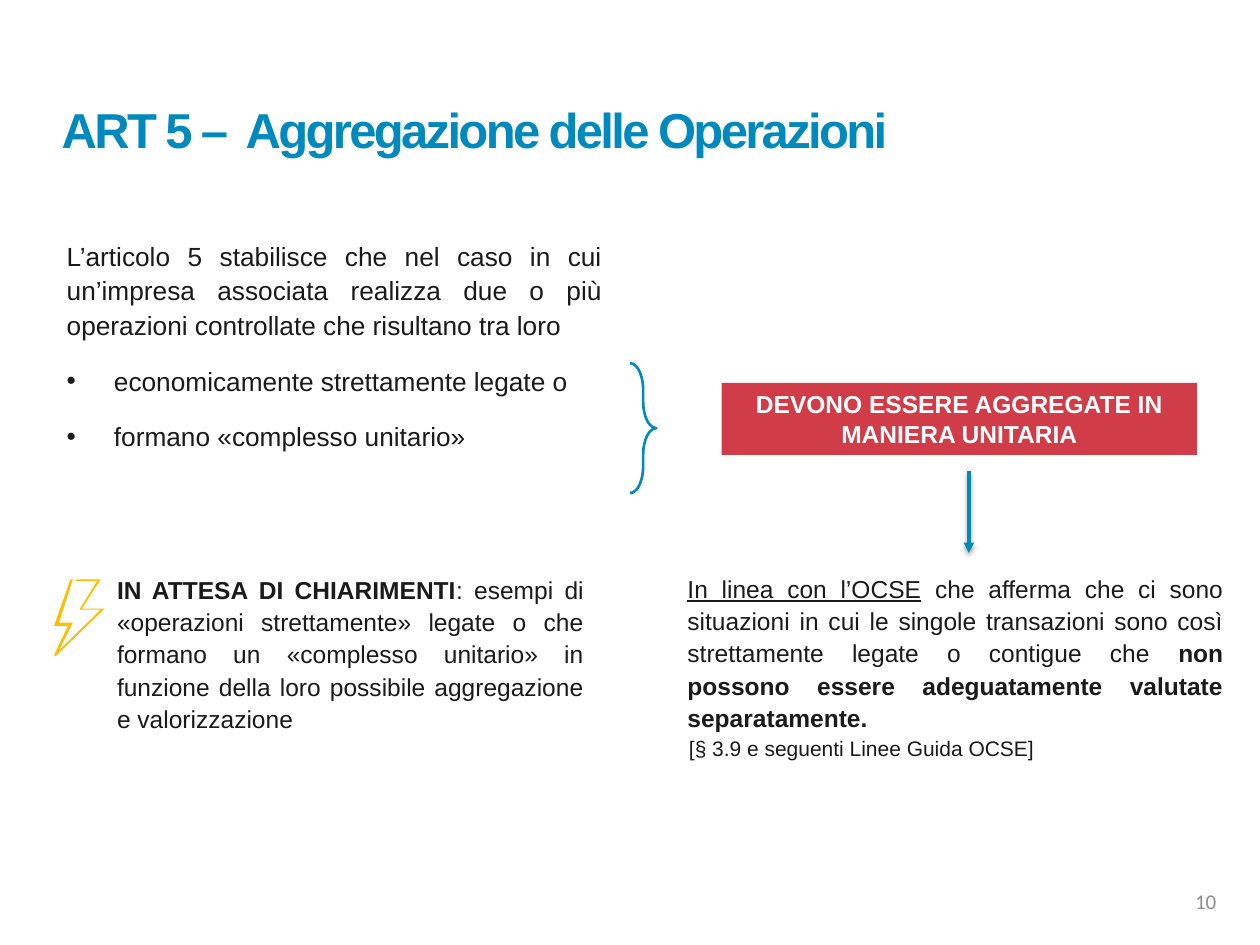
from lxml.etree import SubElement as Sub
from pptx import Presentation
from pptx.dml.color import RGBColor as RGB
from pptx.enum.shapes import MSO_CONNECTOR as Link, MSO_SHAPE as Kind
from pptx.enum.text import MSO_ANCHOR as Anchor, MSO_AUTO_SIZE as Fit, PP_ALIGN as Align
from pptx.oxml.ns import qn
from pptx.util import Cm, Pt

BLUE = RGB(0x00, 0x89, 0xBC)
RED = RGB(0xD0, 0x3D, 0x49)
GOLD = RGB(0xFC, 0xBE, 0x00)
INK = RGB(0x1A, 0x1A, 0x1A)
GREY = RGB(0x8D, 0x8D, 0x8D)
WHITE = RGB(0xFF, 0xFF, 0xFF)

BODY = dict(alignment=Align.JUSTIFY, line_spacing=1.1, space_before=Pt(6), space_after=Pt(6))
BOLT = [(165, 1227), (211, 1227), (112, 1323), (109, 1321), (137, 1262), (109, 1262),
        (142, 1168), (147, 1168), (119, 1255), (147, 1255), (119, 1311), (203, 1229),
        (160, 1229), (196, 1171), (152, 1171), (155, 1168), (203, 1168)]


def apply(item, vals):
    for key, val in vals.items():
        setattr(item, key, val)


class Deck:
    def __init__(self, font):
        self.font = font
        self.prs = Presentation()
        apply(self.prs, dict(slide_width=Cm(25.4), slide_height=Cm(19.05)))
        self.slide = self.prs.slides.add_slide(self.prs.slide_layouts[1])
        self.shapes = self.slide.shapes

    def place(self, shape, *box):
        apply(shape, dict(zip(("left", "top", "width", "height"), map(Cm, box))))

    def fill_in(self, shape, paras, size, color, form, anchor=Anchor.TOP, wrap=True, font=None):
        frame = shape.text_frame
        apply(frame, dict(word_wrap=wrap, auto_size=Fit.NONE, vertical_anchor=anchor))
        for i, runs in enumerate(paras):
            para = frame.add_paragraph() if i else frame.paragraphs[0]
            apply(para, form)
            if not i:
                para.space_before = Pt(0)
            for text, face in runs:
                run = para.add_run()
                run.text = text
                apply(run.font, dict(name=font or self.font, size=Pt(size), **face))
                run.font.color.rgb = color

    def title(self, text, *box):
        shape = self.shapes.title
        self.place(shape, *box)
        form = dict(alignment=Align.LEFT, line_spacing=0.8)
        self.fill_in(shape, [[(text, dict(bold=True))]], 28, BLUE, form, Anchor.MIDDLE)
        shape.text_frame.paragraphs[0].runs[0].font._element.set("spc", "-150")

    def list(self, lead, items, *box):
        shape = self.slide.placeholders[1]
        self.place(shape, *box)
        self.fill_in(shape, [[(text, {})] for text in [lead, *items]], 15, INK, BODY)
        props = shape.text_frame.paragraphs[0]._p.get_or_add_pPr()
        for key in ("marL", "indent"):
            props.set(key, "0")
        Sub(props, qn("a:buNone"))

    def text(self, runs, box, size=14, color=INK, form=BODY, **opts):
        shape = self.shapes.add_textbox(*map(Cm, box))
        self.fill_in(shape, [runs], size, color, form, **opts)

    def paint(self, shape, color):
        shape.shadow.inherit = False
        shape.fill.solid()
        shape.fill.fore_color.rgb = color
        shape.line.fill.background()

    def label(self, text, *box):
        shape = self.shapes.add_shape(Kind.RECTANGLE, *map(Cm, box))
        self.paint(shape, RED)
        self.fill_in(shape, [[(text, dict(bold=True))]], 14, WHITE, dict(alignment=Align.CENTER))

    def bolt(self, spots):
        pen = self.shapes.build_freeform(*spots[0], scale=Cm(0.01))
        pen.add_line_segments(spots[1:], close=True)
        self.paint(pen.convert_to_shape(), GOLD)

    def brace(self, *box):
        shape = self.shapes.add_shape(Kind.LEFT_BRACE, *map(Cm, box))
        shape.shadow.inherit = False
        shape.rotation = 180
        shape.adjustments[0] = 1.02
        shape.fill.background()
        shape.line.color.rgb = BLUE
        shape.line.width = Pt(1.5)

    def arrow(self, x, top, end):
        link = self.shapes.add_connector(Link.STRAIGHT, Cm(x), Cm(top), Cm(x), Cm(end))
        link.line.color.rgb = BLUE
        link.line.width = Pt(2)
        props = link._element.spPr
        Sub(props.find(qn("a:ln")), qn("a:tailEnd"), type="triangle")
        glow = Sub(Sub(props, qn("a:effectLst")), qn("a:outerShdw"), blurRad="40000",
                   dist="20000", dir="5400000", rotWithShape="0")
        Sub(Sub(glow, qn("a:srgbClr"), val="000000"), qn("a:alpha"), val="38000")


def main():
    deck = Deck("Arial")
    deck.title("ART 5 –  Aggregazione delle Operazioni", 0.99, 1.4, 18.14, 2.62)
    deck.label("DEVONO ESSERE AGGREGATE IN MANIERA UNITARIA", 14.55, 7.72, 9.58, 1.45)
    deck.text([("[§ 3.9 e seguenti Linee Guida OCSE]", {})], (13.64, 14.71, 7.52, 0.76),
              size=12, form={}, wrap=False)
    deck.text([("IN ATTESA DI CHIARIMENTI", dict(bold=True)),
               (": esempi di «operazioni strettamente» legate o che formano un «complesso "
                "unitario» in funzione della loro possibile aggregazione e valorizzazione", {})],
              (2.11, 11.4, 9.91, 3.51))
    deck.bolt(BOLT)
    deck.list("L’articolo 5 stabilisce che nel caso in cui un’impresa associata realizza due "
              "o più operazioni controllate che risultano tra loro",
              ["economicamente strettamente legate o", "formano «complesso unitario»"],
              1.09, 4.65, 11.3, 4.57)
    deck.brace(12.7, 7.32, 0.53, 2.62)
    deck.text([("In linea con l’OCSE", dict(underline=True)),
               (" che afferma che ci sono situazioni in cui le singole transazioni sono così "
                "strettamente legate o contigue che ", {}),
               ("non possono essere adeguatamente valutate separatamente.", dict(bold=True))],
              (13.61, 11.38, 11.3, 3.51))
    deck.arrow(19.53, 9.5, 11.15)
    deck.text([("10", {})], (18.85, 17.65, 5.92, 1.02), size=12, color=GREY,
              form=dict(alignment=Align.RIGHT), anchor=Anchor.MIDDLE, font="Calibri")
    deck.prs.save("out.pptx")


if __name__ == "__main__":
    main()
